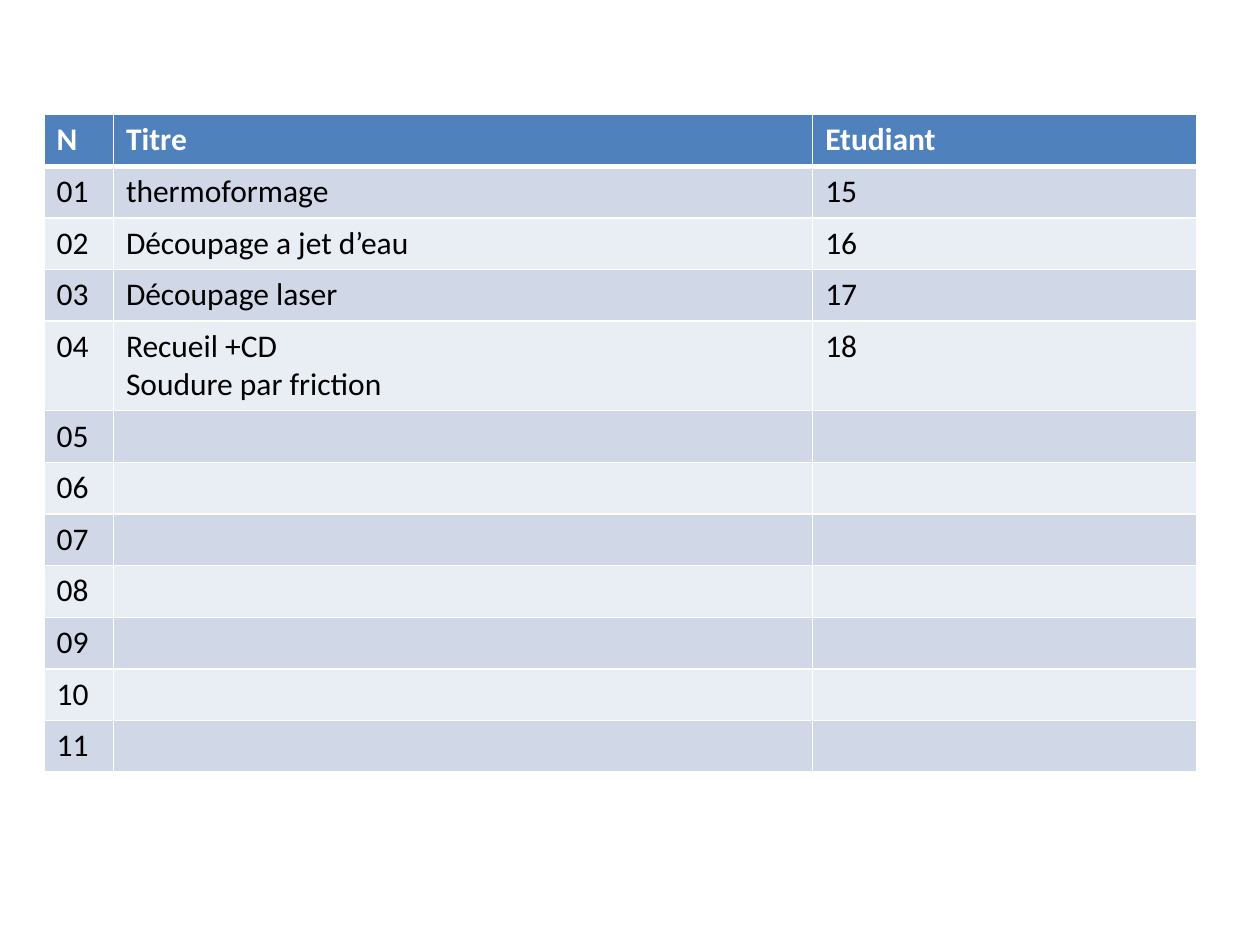
import pptx
import pptx.dml.color
import pptx.oxml
import pptx.oxml.ns
import pptx.util
from pptx.util import Inches

RGBColor = pptx.dml.color.RGBColor
WHITE = RGBColor(0xFF, 0xFF, 0xFF)
BLACK = RGBColor(0x00, 0x00, 0x00)
BLUE = RGBColor(0x4F, 0x81, 0xBD)
BAND_DARK = RGBColor(0xD0, 0xD8, 0xE8)
BAND_LIGHT = RGBColor(0xE9, 0xED, 0xF4)

HEADER = ("N", "Titre", "Etudiant")
TOPICS = (
    ("thermoformage", "15"),
    ("Découpage a jet d’eau", "16"),
    ("Découpage laser", "17"),
    ("Recueil +CD\nSoudure par friction", "18"),
)
ROW_COUNT = 11
COL_WIDTHS = (0.55, 5.55, 3.05)
ROW_HEIGHT = 0.41
TALL_ROW_HEIGHT = 0.71


class SlideBuilder:
    """Holds the style and the current slide."""

    base_font = {"name": "Calibri", "size": pptx.util.Pt(18)}
    header_font = {**base_font, "bold": True}
    body_font = {**base_font, "bold": False}

    def __init__(self, prs):
        self.s = prs.slides.add_slide(prs.slide_layouts[6])

    def border(self, cell, side, width):
        tc_pr = cell._tc.get_or_add_tcPr()
        tc_pr.append(pptx.oxml.parse_xml(
            f'<a:{side} {pptx.oxml.ns.nsdecls("a")} w="{pptx.util.Pt(width)}">'
            f'<a:solidFill><a:srgbClr val="{WHITE}"/></a:solidFill></a:{side}>'))

    def cell(self, cell, text, fill, color, font, top=1, bottom=1):
        # Borders come before the fill in the cell properties
        for side, width in (("lnL", 1), ("lnR", 1), ("lnT", top), ("lnB", bottom)):
            self.border(cell, side, width)
        cell.fill.solid()
        cell.fill.fore_color.rgb = fill
        cell.text = text
        for p in cell.text_frame.paragraphs:
            for r in p.runs:
                for name, value in font.items():
                    setattr(r.font, name, value)
                r.font.color.rgb = color

    def table(self, left, top, widths, rows):
        heights = [TALL_ROW_HEIGHT if any("\n" in text for text in row) else ROW_HEIGHT
                   for row in rows]
        frame = self.s.shapes.add_table(
            len(rows), len(widths), Inches(left), Inches(top),
            Inches(sum(widths)), Inches(sum(heights)))
        table = frame.table
        for column, width in zip(table.columns, widths):
            column.width = Inches(width)
        for i, (row, height) in enumerate(zip(rows, heights)):
            table.rows[i].height = Inches(height)
            for j, text in enumerate(row):
                cell = table.cell(i, j)
                if i == 0:
                    self.cell(cell, text, BLUE, WHITE, self.header_font, bottom=3)
                else:
                    band = BAND_DARK if i % 2 else BAND_LIGHT
                    self.cell(cell, text, band, BLACK, self.body_font,
                              top=3 if i == 1 else 1)


def main():
    prs = pptx.Presentation()
    prs.slide_width, prs.slide_height = Inches(10), Inches(7.5)

    # Numbered topics, then numbered rows left open
    open_rows = (("", ""),) * (ROW_COUNT - len(TOPICS))
    rows = [HEADER] + [(f"{n:02d}", *topic)
                       for n, topic in enumerate(TOPICS + open_rows, 1)]

    # Table of topics and students
    SlideBuilder(prs).table(0.35, 0.91, COL_WIDTHS, rows)
    prs.save("out.pptx")


if __name__ == "__main__":
    main()
